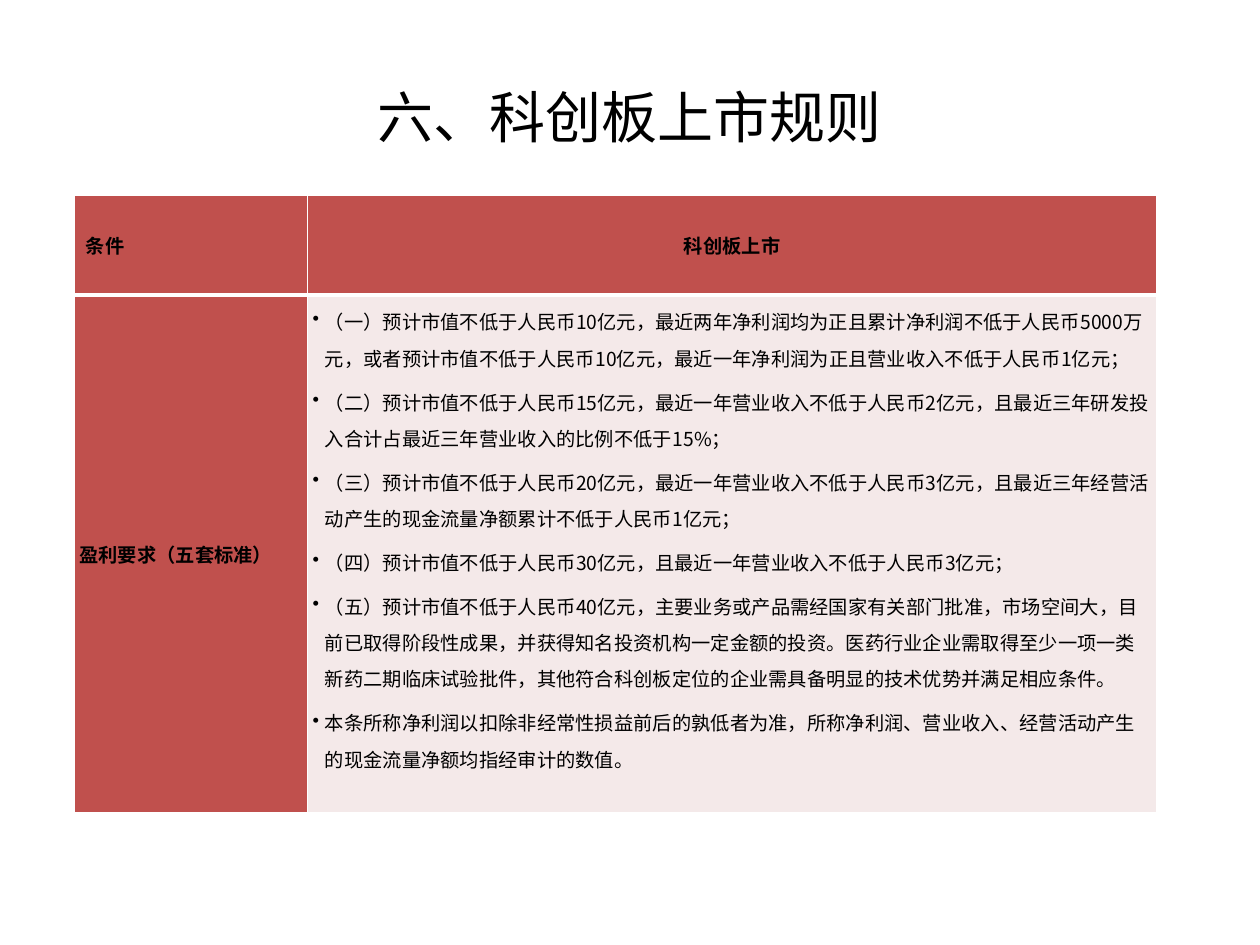
from dataclasses import dataclass

from lxml import etree
from pptx import Presentation
from pptx.dml.color import RGBColor
from pptx.enum.text import MSO_ANCHOR, PP_ALIGN
from pptx.oxml.ns import qn
from pptx.util import Cm, Pt

LEFT, CENTER = PP_ALIGN.LEFT, PP_ALIGN.CENTER
TOP, MIDDLE = MSO_ANCHOR.TOP, MSO_ANCHOR.MIDDLE
TITLE_ONLY = 5


@dataclass(frozen=True)
class Theme:
    font: str = "Noto Sans CJK SC"
    ink: str = "000000"
    accent: str = "C0504D"
    tint: str = "F4E9E9"
    rule: str = "FFFFFF"
    title_size: float = 32
    body_size: float = 11
    thin: float = 1
    thick: float = 3


THEME = Theme()
HEADER_INSETS = (0.23, 0.1)
BODY_INSETS = (0.1, 0.08)
COLUMN_WIDTHS = (4.7, 17.12)
ROW_HEIGHTS = (2.01, 10.41)

STANDARDS = [
    "（一）预计市值不低于人民币10亿元，最近两年净利润均为正且累计净利润不低于人民币5000万元，"
    "或者预计市值不低于人民币10亿元，最近一年净利润为正且营业收入不低于人民币1亿元；",
    "（二）预计市值不低于人民币15亿元，最近一年营业收入不低于人民币2亿元，"
    "且最近三年研发投入合计占最近三年营业收入的比例不低于15%；",
    "（三）预计市值不低于人民币20亿元，最近一年营业收入不低于人民币3亿元，"
    "且最近三年经营活动产生的现金流量净额累计不低于人民币1亿元；",
    "（四）预计市值不低于人民币30亿元，且最近一年营业收入不低于人民币3亿元；",
    "（五）预计市值不低于人民币40亿元，主要业务或产品需经国家有关部门批准，市场空间大，"
    "目前已取得阶段性成果，并获得知名投资机构一定金额的投资。"
    "医药行业企业需取得至少一项一类新药二期临床试验批件，"
    "其他符合科创板定位的企业需具备明显的技术优势并满足相应条件。",
    "本条所称净利润以扣除非经常性损益前后的孰低者为准，"
    "所称净利润、营业收入、经营活动产生的现金流量净额均指经审计的数值。",
]


def add_run(paragraph, text, size, bold=False):
    run = paragraph.add_run()
    run.text = text
    run.font.size = Pt(size)
    run.font.bold = bold
    run.font.color.rgb = RGBColor.from_string(THEME.ink)
    run.font.name = THEME.font
    properties = run.font._element
    etree.SubElement(properties, qn("a:ea"), typeface=THEME.font)


def add_bullet(paragraph):
    paragraph.line_spacing = 1.3
    properties = paragraph._p.get_or_add_pPr()
    properties.set("marL", str(Cm(0.25)))
    properties.set("indent", str(-Cm(0.25)))
    etree.SubElement(properties, qn("a:buChar"), char="•")


def set_borders(cell, top, bottom):
    properties = cell._tc.get_or_add_tcPr()
    widths = {"lnL": THEME.thin, "lnR": THEME.thin, "lnT": top, "lnB": bottom}
    for position, (side, width) in enumerate(widths.items()):
        line = etree.Element(qn(f"a:{side}"), w=str(Pt(width)))
        fill = etree.SubElement(line, qn("a:solidFill"))
        etree.SubElement(fill, qn("a:srgbClr"), val=THEME.rule)
        properties.insert(position, line)


def fill_cell(cell, texts, color, insets, align=LEFT, anchor=MIDDLE,
              bold=True, bulleted=False):
    cell.fill.solid()
    cell.fill.fore_color.rgb = RGBColor.from_string(color)
    cell.margin_left = cell.margin_right = Cm(insets[0])
    cell.margin_top = cell.margin_bottom = Cm(insets[1])
    cell.vertical_anchor = anchor
    frame = cell.text_frame
    for index, text in enumerate(texts):
        paragraph = frame.add_paragraph() if index else frame.paragraphs[0]
        paragraph.alignment = align
        paragraph.space_before = Pt(0.4 * THEME.body_size)
        if bulleted:
            add_bullet(paragraph)
        add_run(paragraph, text, THEME.body_size, bold)


def add_title(slide, text):
    title = slide.shapes.title
    title.left, title.top = Cm(1.27), Cm(0.76)
    title.width, title.height = Cm(22.86), Cm(3.18)
    title.text_frame.vertical_anchor = MIDDLE
    paragraph = title.text_frame.paragraphs[0]
    paragraph.alignment = CENTER
    add_run(paragraph, text, THEME.title_size)


def add_rules_table(slide):
    table = slide.shapes.add_table(
        2, 2, Cm(1.5), Cm(3.94), Cm(sum(COLUMN_WIDTHS)), Cm(sum(ROW_HEIGHTS))
    ).table
    table.horz_banding = False
    for column, width in zip(table.columns, COLUMN_WIDTHS):
        column.width = Cm(width)
    for row, height in zip(table.rows, ROW_HEIGHTS):
        row.height = Cm(height)

    fill_cell(table.cell(0, 0), ["条件"], THEME.accent, HEADER_INSETS)
    fill_cell(table.cell(0, 1), ["科创板上市"], THEME.accent, HEADER_INSETS, CENTER)
    fill_cell(table.cell(1, 0), ["盈利要求（五套标准）"], THEME.accent, BODY_INSETS)
    fill_cell(table.cell(1, 1), STANDARDS, THEME.tint, BODY_INSETS,
              anchor=TOP, bold=False, bulleted=True)
    for column in range(len(COLUMN_WIDTHS)):
        set_borders(table.cell(0, column), THEME.thin, THEME.thick)
        set_borders(table.cell(1, column), THEME.thick, THEME.thin)


def main():
    deck = Presentation()
    deck.slide_width, deck.slide_height = Cm(25.4), Cm(19.05)
    slide = deck.slides.add_slide(deck.slide_layouts[TITLE_ONLY])
    add_rules_table(slide)
    add_title(slide, "六、科创板上市规则")
    deck.save("out.pptx")


if __name__ == "__main__":
    main()
